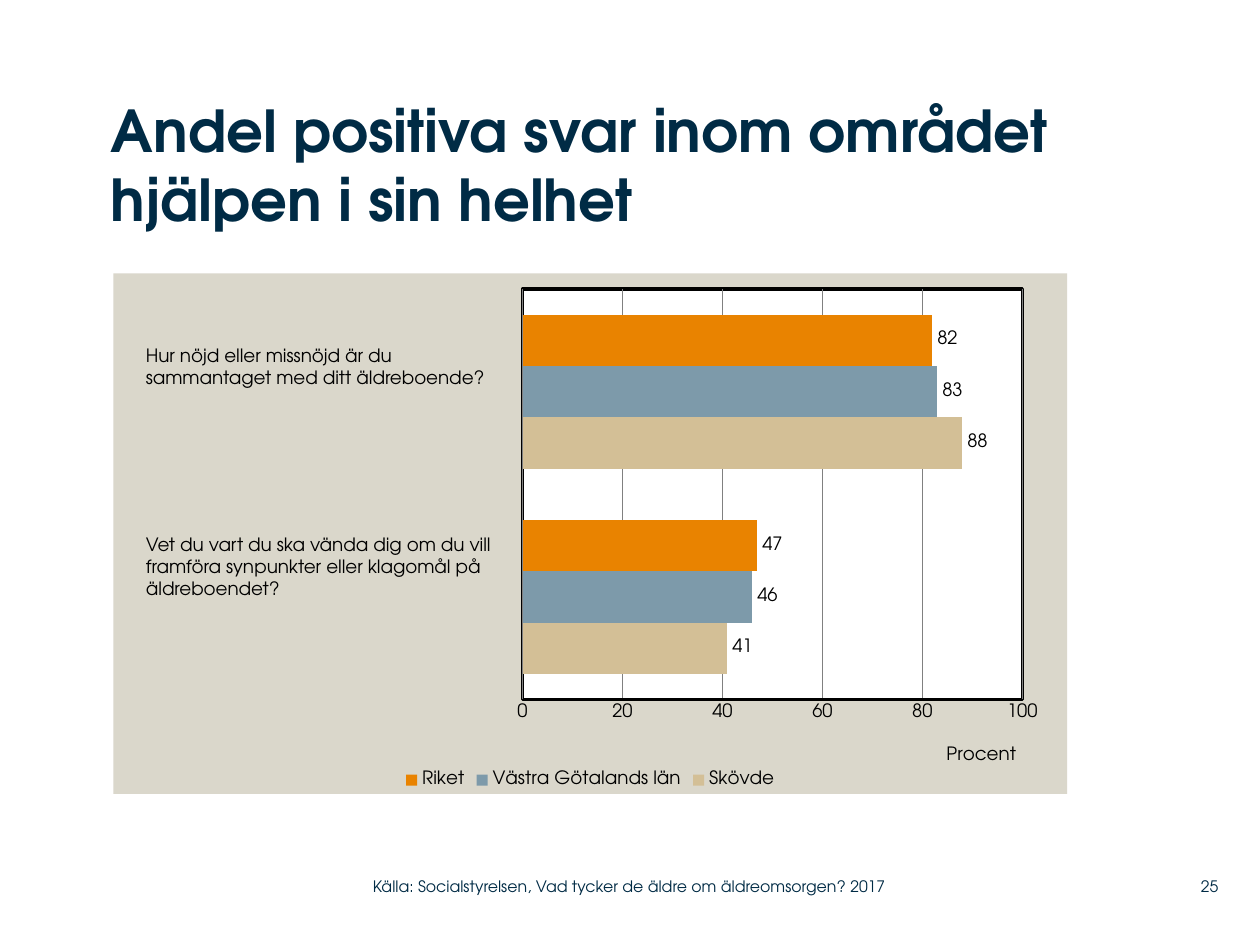
from lxml import etree
from pptx import Presentation
from pptx.chart.data import CategoryChartData
from pptx.dml.color import RGBColor
from pptx.enum.chart import XL_CHART_TYPE, XL_LABEL_POSITION, XL_LEGEND_POSITION, XL_TICK_MARK
from pptx.enum.text import MSO_ANCHOR, PP_ALIGN
from pptx.oxml import parse_xml
from pptx.oxml.ns import nsdecls, qn
from pptx.util import Inches, Pt

FONT = "TeX Gyre Adventor"
NAVY = "002B45"


def rgb(value):
    return RGBColor.from_string(value)


def layout(**values):
    el = etree.Element(qn("c:layout"))
    manual = etree.SubElement(el, qn("c:manualLayout"))
    for tag, value in values.items():
        etree.SubElement(manual, qn("c:" + tag)).set("val", str(value))
    return el


prs = Presentation()
prs.slide_width, prs.slide_height = Inches(10), Inches(7.5)
s = prs.slides.add_slide(prs.slide_layouts[6])

data = CategoryChartData()
data.categories = ["1", "2"]
series = [
    ("Skövde", (41, 88), "D3BF96"),
    ("Västra Götalands län", (46, 83), "7D9AAA"),
    ("Riket", (47, 82), "E98300"),
]
for name, values, color in series:
    data.add_series(name, values)
chart = s.shapes.add_chart(
    XL_CHART_TYPE.BAR_CLUSTERED, Inches(0.9), Inches(2.17), Inches(7.57), Inches(4.13), data
).chart
chart.has_title = False
chart.font.name, chart.font.size = FONT, Pt(10.5)
chart.font.color.rgb = rgb("000000")
chart.has_legend = True
chart.legend.position = XL_LEGEND_POSITION.BOTTOM
chart.legend.include_in_layout = False

plot = chart.plots[0]
plot.gap_width, plot.overlap = 100, 0
plot.vary_by_categories = False
for ser, (name, values, color) in zip(plot.series, series):
    ser.format.fill.solid()
    ser.format.fill.fore_color.rgb = rgb(color)
    ser.data_labels.show_value = True
    ser.data_labels.position = XL_LABEL_POSITION.OUTSIDE_END

chart.category_axis.visible = False
axis = chart.value_axis
axis.minimum_scale, axis.maximum_scale, axis.major_unit = 0, 100, 20
axis.major_tick_mark = axis.minor_tick_mark = XL_TICK_MARK.NONE
axis.format.line.color.rgb = rgb("000000")
axis.format.line.width = Pt(2)
axis.has_major_gridlines = True
axis.major_gridlines.format.line.color.rgb = rgb("808080")
axis.major_gridlines.format.line.width = Pt(0.75)
title = axis.axis_title
title.text_frame.text = "Procent"
font = title.text_frame.paragraphs[0].runs[0].font
font.name, font.size, font.bold = FONT, Pt(10.5), False
font.color.rgb = rgb("000000")

title_el = title.text_frame._txBody.getparent().getparent()
plot_el = chart.element.find(".//" + qn("c:plotArea"))
for el in (title_el, plot_el):
    for old in el.findall(qn("c:layout")):
        el.remove(old)
title_el.insert(1, layout(xMode="edge", yMode="edge", x=0.87, y=0.9))
plot_el.insert(0, layout(layoutTarget="inner", xMode="edge", yMode="edge",
                         x=0.429, y=0.03, w=0.524, h=0.789))

FILL = '<c:spPr %s><a:solidFill><a:srgbClr val="%s"/></a:solidFill><a:ln%s</a:ln></c:spPr>'
BORDER = ' w="25400"><a:solidFill><a:srgbClr val="000000"/></a:solidFill>'
plot_el.append(parse_xml(FILL % (nsdecls("c", "a"), "FFFFFF", BORDER)))
chart.element.find(qn("c:chart")).addnext(
    parse_xml(FILL % (nsdecls("c", "a"), "DAD7CB", "><a:noFill/>")))

TOP, MIDDLE = MSO_ANCHOR.TOP, MSO_ANCHOR.MIDDLE
LEFT, RIGHT = PP_ALIGN.LEFT, PP_ALIGN.RIGHT
texts = [
    ("Andel positiva svar inom området hjälpen i sin helhet",
     (0.88, 0.75, 7.6, 1.42), 33, NAVY, True, 0, TOP, LEFT),
    ("Hur nöjd eller missnöjd är du\nsammantaget med ditt äldreboende?",
     (1.06, 2.68, 2.94, 0.45), 10.5, "000000", False, 0.1, TOP, LEFT),
    ("Vet du vart du ska vända dig om du vill framföra synpunkter eller klagomål på äldreboendet?",
     (1.06, 4.18, 3.03, 0.63), 10.5, "000000", False, 0.1, TOP, LEFT),
    ("25", (9.2, 6.89, 0.47, 0.29), 9, NAVY, False, 0, MIDDLE, RIGHT),
    ("Källa: Socialstyrelsen, Vad tycker de äldre om äldreomsorgen? 2017",
     (2.96, 6.89, 4.43, 0.29), 9, NAVY, False, 0, MIDDLE, LEFT),
]
for text, box, size, color, bold, inset, anchor, align in texts:
    tf = s.shapes.add_textbox(*[Inches(v) for v in box]).text_frame
    tf.word_wrap = True
    tf.vertical_anchor = anchor
    tf.margin_left = tf.margin_right = Inches(inset)
    tf.margin_top = tf.margin_bottom = Inches(inset / 2)
    tf.text = text
    for p in tf.paragraphs:
        p.alignment = align
        for r in p.runs:
            r.font.name, r.font.size, r.font.bold = FONT, Pt(size), bold
            r.font.color.rgb = rgb(color)

prs.save("out.pptx")
